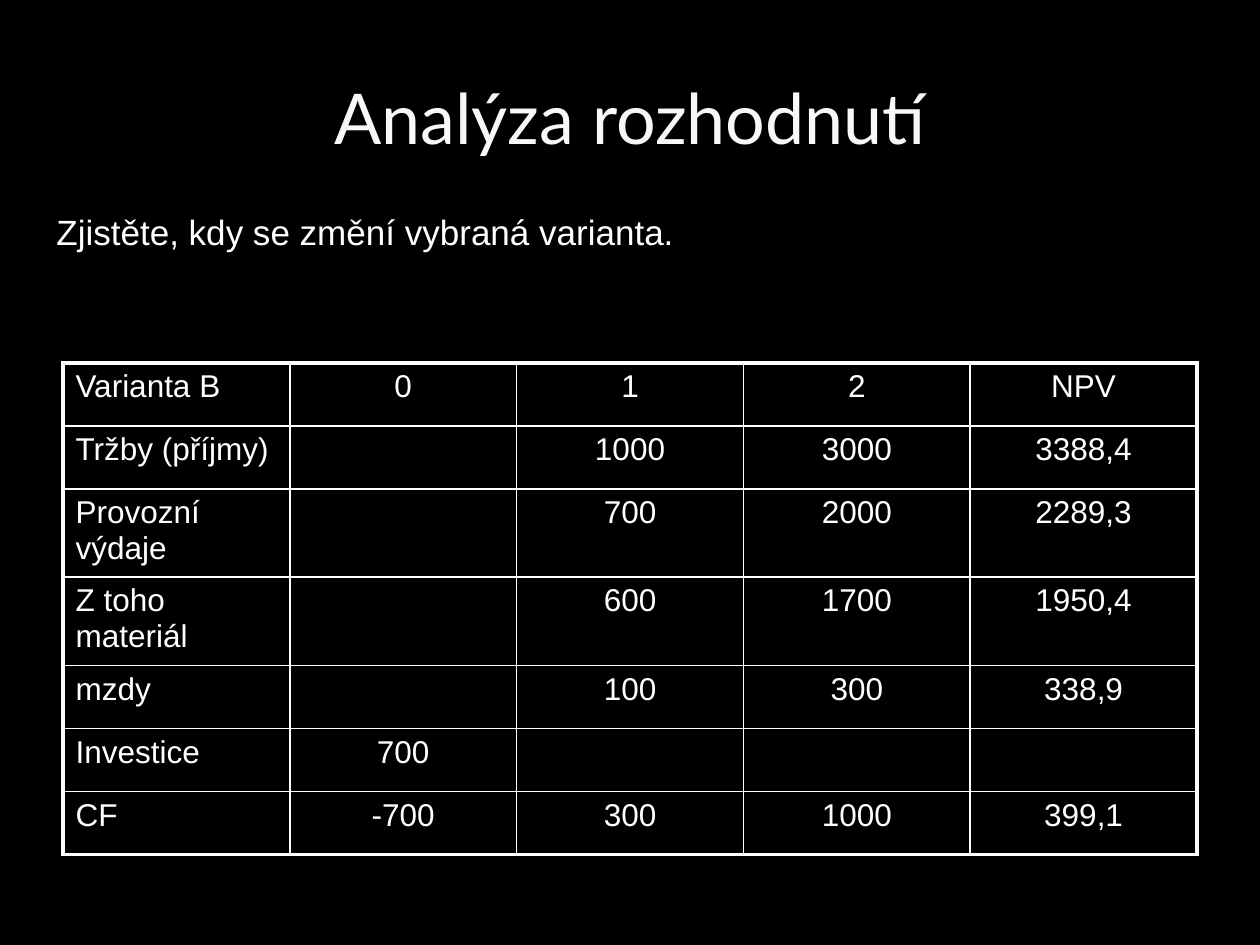
import lxml.etree
import pptx
import pptx.dml.color
import pptx.enum.text
import pptx.oxml.ns
import pptx.util

Inches = pptx.util.Inches
Align = pptx.enum.text.PP_ALIGN
Anchor = pptx.enum.text.MSO_ANCHOR

BLACK = "000000"
WHITE = "FFFFFF"
TITLE_COLOR = "F8F8F8"
OUTER_BORDER = 2.25
INNER_BORDER = 1

ROWS = [
    ["Varianta B", "0", "1", "2", "NPV"],
    ["Tržby (příjmy)", "", "1000", "3000", "3388,4"],
    ["Provozní výdaje", "", "700", "2000", "2289,3"],
    ["Z toho materiál", "", "600", "1700", "1950,4"],
    ["mzdy", "", "100", "300", "338,9"],
    ["Investice", "700", "", "", ""],
    ["CF", "-700", "300", "1000", "399,1"],
]


def color(value):
    return pptx.dml.color.RGBColor.from_string(value)


def write(paragraph, text, size, font="Arial", fill=WHITE, align=Align.LEFT):
    paragraph.alignment = align
    run = paragraph.add_run()
    run.text = text
    run.font.size = pptx.util.Pt(size)
    run.font.name = font
    run.font.color.rgb = color(fill)


def add_text(slide, box, text, size, anchor=Anchor.TOP, **style):
    frame = slide.shapes.add_textbox(*map(Inches, box)).text_frame
    frame.word_wrap = True
    frame.vertical_anchor = anchor
    write(frame.paragraphs[0], text, size, **style)


def set_borders(cell, widths):
    """Draw the cell's sides; widths maps L, R, T, B, in that order, to points."""
    properties = cell._tc.get_or_add_tcPr()
    qn = pptx.oxml.ns.qn
    for side, width in widths.items():
        line = lxml.etree.SubElement(properties, qn(f"a:ln{side}"), w=str(pptx.util.Pt(width)))
        fill = lxml.etree.SubElement(line, qn("a:solidFill"))
        lxml.etree.SubElement(fill, qn("a:srgbClr"), val=WHITE)


def add_cash_flow_table(slide, box, row_height):
    row_count, column_count = len(ROWS), len(ROWS[0])
    table = slide.shapes.add_table(row_count, column_count, *map(Inches, box)).table
    table.first_row = False
    table.horz_banding = False
    for row in table.rows:
        row.height = Inches(row_height)
    for row_index, values in enumerate(ROWS):
        for column_index, value in enumerate(values):
            cell = table.cell(row_index, column_index)
            on_edge = {
                "L": column_index == 0,
                "R": column_index == column_count - 1,
                "T": row_index == 0,
                "B": row_index == row_count - 1,
            }
            set_borders(cell, {side: OUTER_BORDER if edge else INNER_BORDER
                               for side, edge in on_edge.items()})
            cell.fill.background()
            if value:
                align = Align.LEFT if column_index == 0 else Align.CENTER
                write(cell.text_frame.paragraphs[0], value, 18, align=align)


def main():
    presentation = pptx.Presentation()
    presentation.slide_width = Inches(10)
    presentation.slide_height = Inches(7.5)
    slide = presentation.slides.add_slide(presentation.slide_layouts[6])
    slide.background.fill.solid()
    slide.background.fill.fore_color.rgb = color(BLACK)

    add_text(slide, (0.5, 0.3, 9, 1.25), "Analýza rozhodnutí", 40, anchor=Anchor.MIDDLE,
             font="Lato", fill=TITLE_COLOR, align=Align.CENTER)
    add_cash_flow_table(slide, (0.5, 2.88, 9, 3.5), row_height=0.5)
    add_text(slide, (0.35, 1.62, 9.06, 0.43), "Zjistěte, kdy se změní vybraná varianta.", 20)

    presentation.save("out.pptx")


if __name__ == "__main__":
    main()
